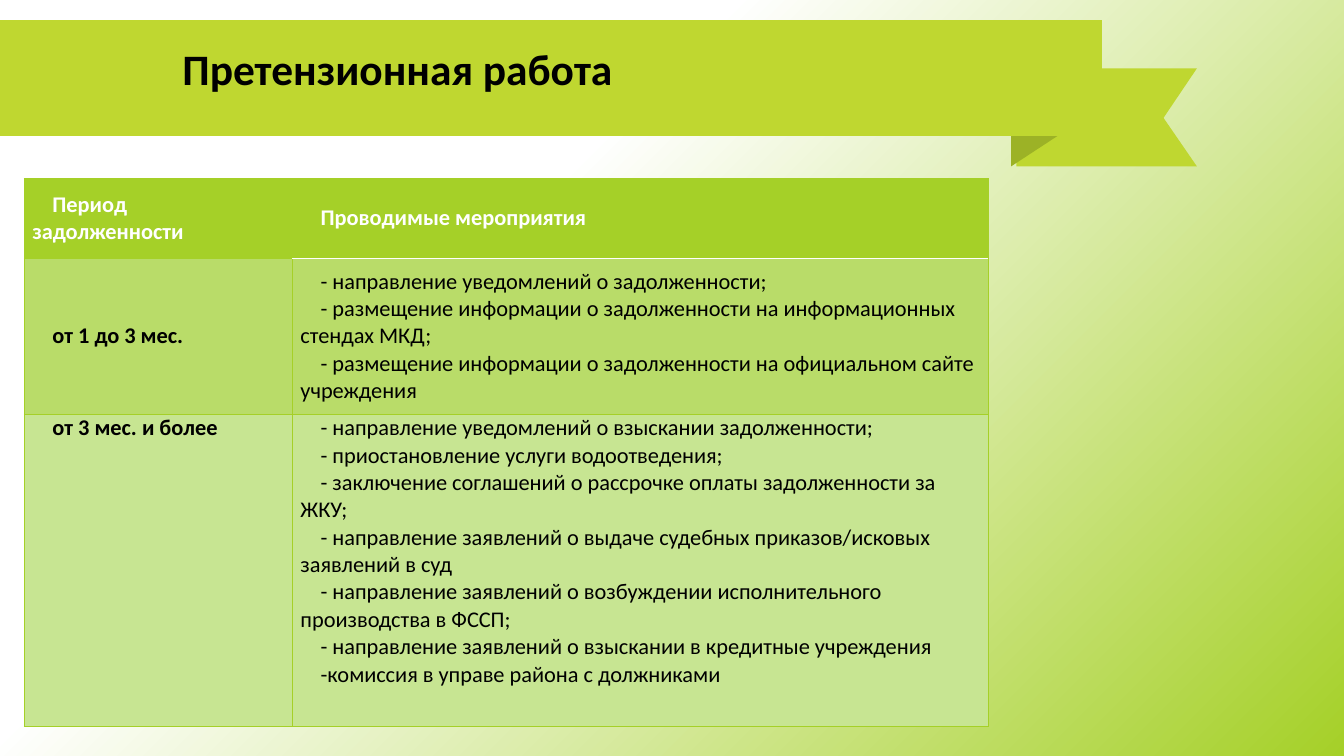
from lxml import etree
from pptx import Presentation
from pptx.dml.color import RGBColor
from pptx.enum import text
from pptx.oxml import ns
from pptx.util import Inches, Pt

WHITE = RGBColor(0xFF, 0xFF, 0xFF)
BLACK = RGBColor(0, 0, 0)
GREEN = RGBColor(0xA5, 0xD0, 0x28)
RIBBON = RGBColor(0xBF, 0xD7, 0x30)
FOLD = RGBColor(0x9C, 0xB2, 0x26)
MEDIUM = RGBColor(0xB9, 0xDC, 0x69)
LIGHT = RGBColor(0xC7, 0xE5, 0x92)


def write(para, words, size=16, bold=False, color=BLACK):
    span = para.add_run()
    span.text = words
    span.font.name = "Calibri"
    span.font.size = Pt(size)
    span.font.bold = bold
    span.font.color.rgb = color


def add_border(cell, side, color, width):
    line = etree.Element(ns.qn(f"a:ln{side}"), w=str(Pt(width)))
    fill = etree.SubElement(line, ns.qn("a:solidFill"))
    etree.SubElement(fill, ns.qn("a:srgbClr"), val=str(color))
    cell._tc.get_or_add_tcPr().insert("LRTB".index(side), line)


deck = Presentation()
deck.slide_width = Inches(13.33)
deck.slide_height = Inches(7.5)
page = deck.slides.add_slide(deck.slide_layouts[5])

backdrop = page.background.fill
backdrop.gradient()
backdrop.gradient_angle = 315
for stop, position, color in zip(backdrop.gradient_stops, (0.35, 1), (WHITE, GREEN)):
    stop.position = position
    stop.color.rgb = color

ribbon_parts = [
    (RIBBON, [(11.87, 0.68), (10.08, 0.68), (10.08, 1.65), (11.87, 1.65), (11.54, 1.17)]),
    (FOLD, [(10.69, 0.68), (10.47, 0.68), (10.03, 1.24), (10.03, 1.65), (10.58, 1.29)]),
    (RIBBON, [(0, 1.35), (0, 0.2), (10.93, 0.2), (10.93, 1.35)]),
]
for color, points in ribbon_parts:
    corners = [(Inches(x), Inches(y)) for x, y in points]
    builder = page.shapes.build_freeform(*corners[0])
    builder.add_line_segments(corners[1:], close=True)
    part = builder.convert_to_shape()
    part.shadow.inherit = False
    part.fill.solid()
    part.fill.fore_color.rgb = color
    part.line.fill.background()

title = page.shapes.title
title.left, title.top = Inches(1.71), Inches(0.38)
title.width, title.height = Inches(9.53), Inches(1.8)
page.shapes._spTree.append(title._element)
frame = title.text_frame
frame.vertical_anchor = text.MSO_ANCHOR.TOP
frame.auto_size = text.MSO_AUTO_SIZE.NONE
frame.margin_top = Inches(0.1)
heading = frame.paragraphs[0]
heading.alignment = text.PP_ALIGN.LEFT
heading.line_spacing = 0.9
write(heading, "Претензионная работа", size=31, bold=True)

rows = [
    (0.79, GREEN, "Период задолженности", ["Проводимые мероприятия"]),
    (1.55, MEDIUM, "от 1 до 3 мес.", [
        "- направление уведомлений о задолженности;",
        "- размещение информации о задолженности на информационных стендах МКД;",
        "- размещение информации о задолженности на официальном сайте учреждения",
    ]),
    (3.1, LIGHT, "от 3 мес. и более", [
        "- направление уведомлений о взыскании задолженности;",
        "- приостановление услуги водоотведения;",
        "- заключение соглашений о рассрочке оплаты задолженности за ЖКУ;",
        "- направление заявлений о выдаче судебных приказов/исковых заявлений в суд",
        "- направление заявлений о возбуждении исполнительного производства в ФССП;",
        "- направление заявлений о взыскании в кредитные учреждения",
        "-комиссия в управе района с должниками",
    ]),
]
table = page.shapes.add_table(
    3, 2, Inches(0.24), Inches(1.77), Inches(9.56), Inches(5.44)
).table
for column, width in zip(table.columns, (2.66, 6.9)):
    column.width = Inches(width)

for row, (height, color, period, measures) in enumerate(rows):
    table.rows[row].height = Inches(height)
    for column, lines in enumerate(([period], measures)):
        cell = table.cell(row, column)
        cell.fill.solid()
        cell.fill.fore_color.rgb = color
        cell.margin_left = Inches(0.08)
        cell.margin_right = Inches(0.07)
        cell.margin_top = cell.margin_bottom = 0
        cell.vertical_anchor = text.MSO_ANCHOR.TOP if row == 2 else text.MSO_ANCHOR.MIDDLE
        for index, words in enumerate(lines):
            para = cell.text_frame.paragraphs[0] if index == 0 else cell.text_frame.add_paragraph()
            para._p.get_or_add_pPr().set("indent", str(Inches(0.2)))
            write(para, words, bold=row == 0 or column == 0, color=WHITE if row == 0 else BLACK)
        for side in "LRTB":
            divider = column == 1 and (row, side) in ((0, "B"), (1, "T"))
            add_border(cell, side, WHITE if divider else GREEN, 0.5)

table.cell(0, 0).margin_right = Inches(0.4)
deck.save("out.pptx")
